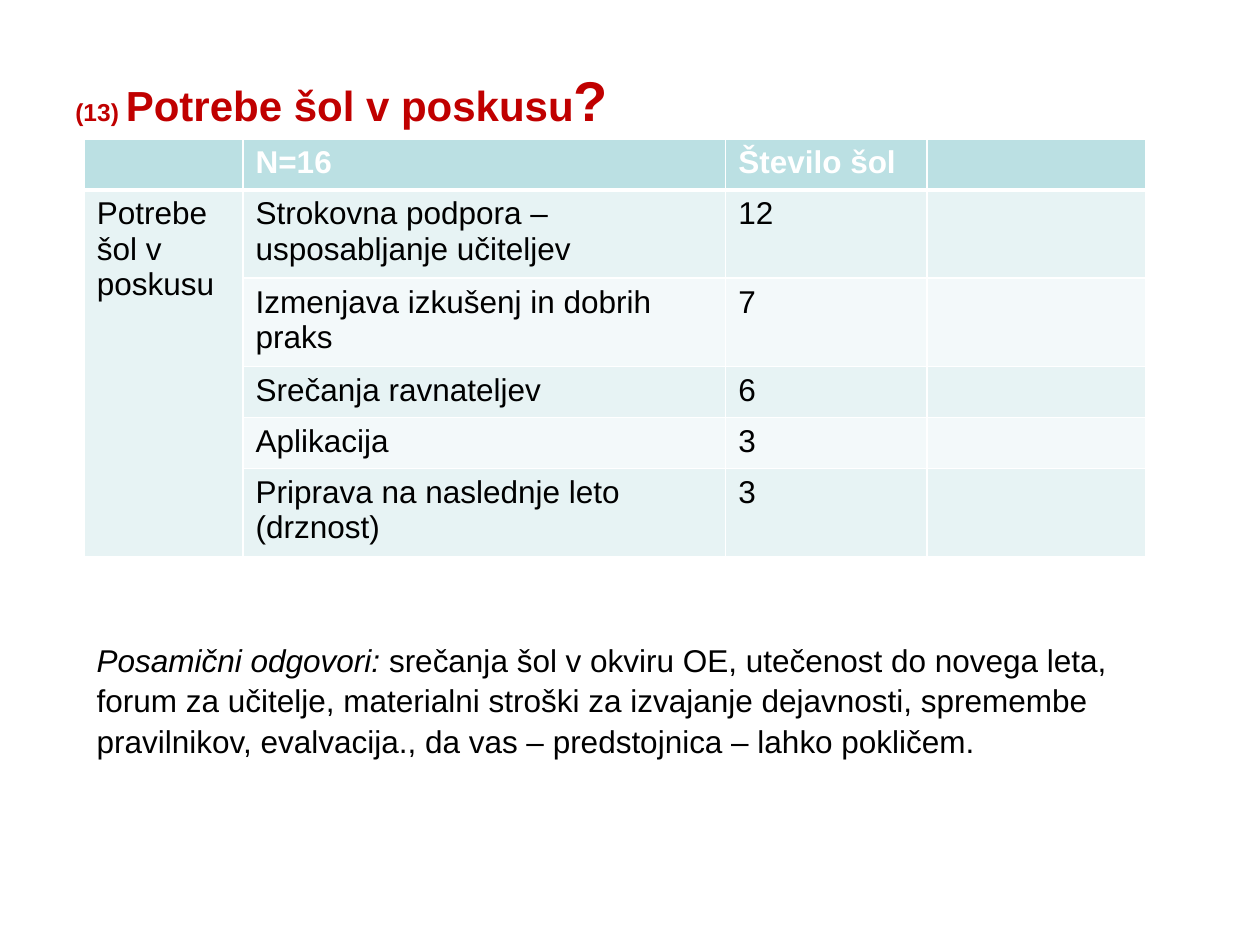
from lxml.etree import SubElement
from pptx import Presentation
from pptx.dml.color import RGBColor
from pptx.enum.text import MSO_ANCHOR
from pptx.oxml.ns import qn
from pptx.util import Cm, Pt


def add_span(paragraph, text, size, color, bold=False, italic=False):
    span = paragraph.add_run()
    span.text = text
    span.font.name = "Arial"
    span.font.size = Pt(size)
    span.font.bold = bold
    span.font.italic = italic
    span.font.color.rgb = RGBColor.from_string(color)


def add_white_borders(cell, bottom_width):
    """Draw 1 pt white cell edges, with a bottom edge of its own width."""
    properties = cell._tc.get_or_add_tcPr()
    for edge, width in (("L", 1), ("R", 1), ("T", 1), ("B", bottom_width)):
        line = SubElement(properties, qn(f"a:ln{edge}"), w=str(Pt(width)))
        SubElement(SubElement(line, qn("a:solidFill")), qn("a:srgbClr"), val="FFFFFF")


deck = Presentation()
deck.slide_width, deck.slide_height = Cm(25.4), Cm(19.05)
page = deck.slides.add_slide(deck.slide_layouts[6])

# Title
title_box = page.shapes.add_textbox(Cm(1.27), Cm(0.41), Cm(22.86), Cm(3.18))
title_box.text_frame.word_wrap = True
title_box.text_frame.vertical_anchor = MSO_ANCHOR.MIDDLE
title = title_box.text_frame.paragraphs[0]
for text, size in (("(13) ", 14), ("Potrebe šol v poskusu", 24), ("?", 32)):
    add_span(title, text, size, "C00000", bold=True)

# Table of needs
needs = [
    ("", "N=16", "Število šol", ""),
    ("Potrebe šol v poskusu", "Strokovna podpora – usposabljanje učiteljev", "12", ""),
    ("", "Izmenjava izkušenj in dobrih praks", "7", ""),
    ("", "Srečanja ravnateljev", "6", ""),
    ("", "Aplikacija", "3", ""),
    ("", "Priprava na naslednje leto (drznost)", "3", ""),
]
column_widths = [3.2, 9.73, 4.06, 4.4]
row_heights = [1.03, 1.68, 1.68, 1.03, 1.03, 1.68]
table = page.shapes.add_table(
    len(needs), len(column_widths), Cm(1.7), Cm(2.8),
    Cm(sum(column_widths)), Cm(sum(row_heights)),
).table
for column, width in zip(table.columns, column_widths):
    column.width = Cm(width)

for row_index, texts in enumerate(needs):
    table.rows[row_index].height = Cm(row_heights[row_index])
    is_header = row_index == 0
    band_color = "E7F3F4" if row_index % 2 else "F3F9FA"
    for column_index, text in enumerate(texts):
        cell = table.cell(row_index, column_index)
        add_white_borders(cell, 3 if is_header else 1)
        cell.fill.solid()
        cell.fill.fore_color.rgb = RGBColor.from_string("BBE0E3" if is_header else band_color)
        paragraph = cell.text_frame.paragraphs[0]
        if text:
            add_span(paragraph, text, 18, "FFFFFF" if is_header else "000000", bold=is_header)
        else:
            paragraph.font.size = Pt(18)
table.cell(1, 0).merge(table.cell(len(needs) - 1, 0))

# Individual answers
answers_box = page.shapes.add_textbox(Cm(1.7), Cm(12.73), Cm(22.43), Cm(2.57))
answers = answers_box.text_frame
answers.word_wrap = True
first = answers.paragraphs[0]
add_span(first, "Posamični odgovori: ", 18, "000000", italic=True)
add_span(first, "srečanja šol v okviru OE, utečenost do novega leta,", 18, "000000")
add_span(
    answers.add_paragraph(),
    "forum za učitelje, materialni stroški za izvajanje dejavnosti, spremembe "
    "pravilnikov, evalvacija., da vas – predstojnica – lahko pokličem.",
    18, "000000",
)
for paragraph in answers.paragraphs:
    paragraph.line_spacing = 1.08

deck.save("out.pptx")
